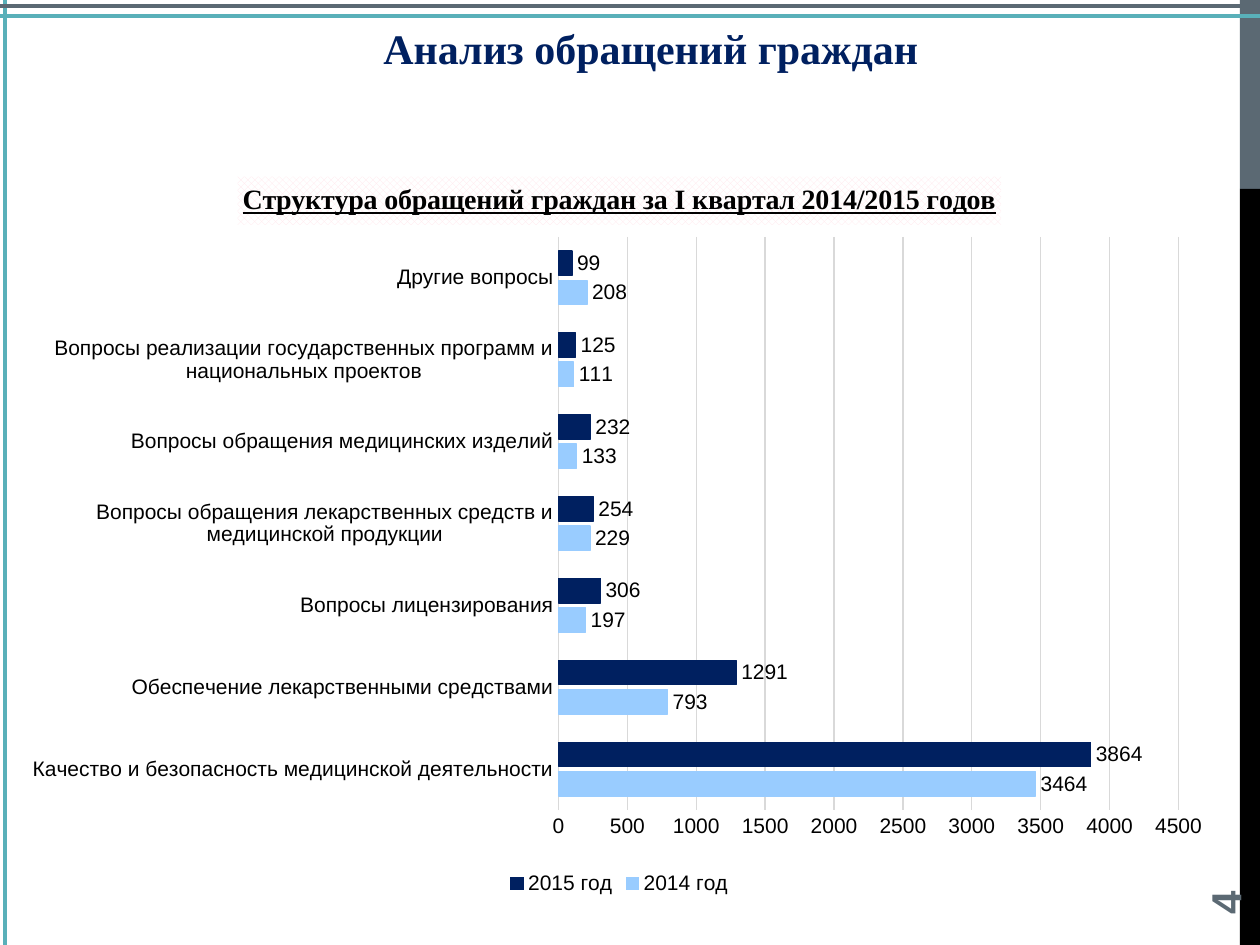
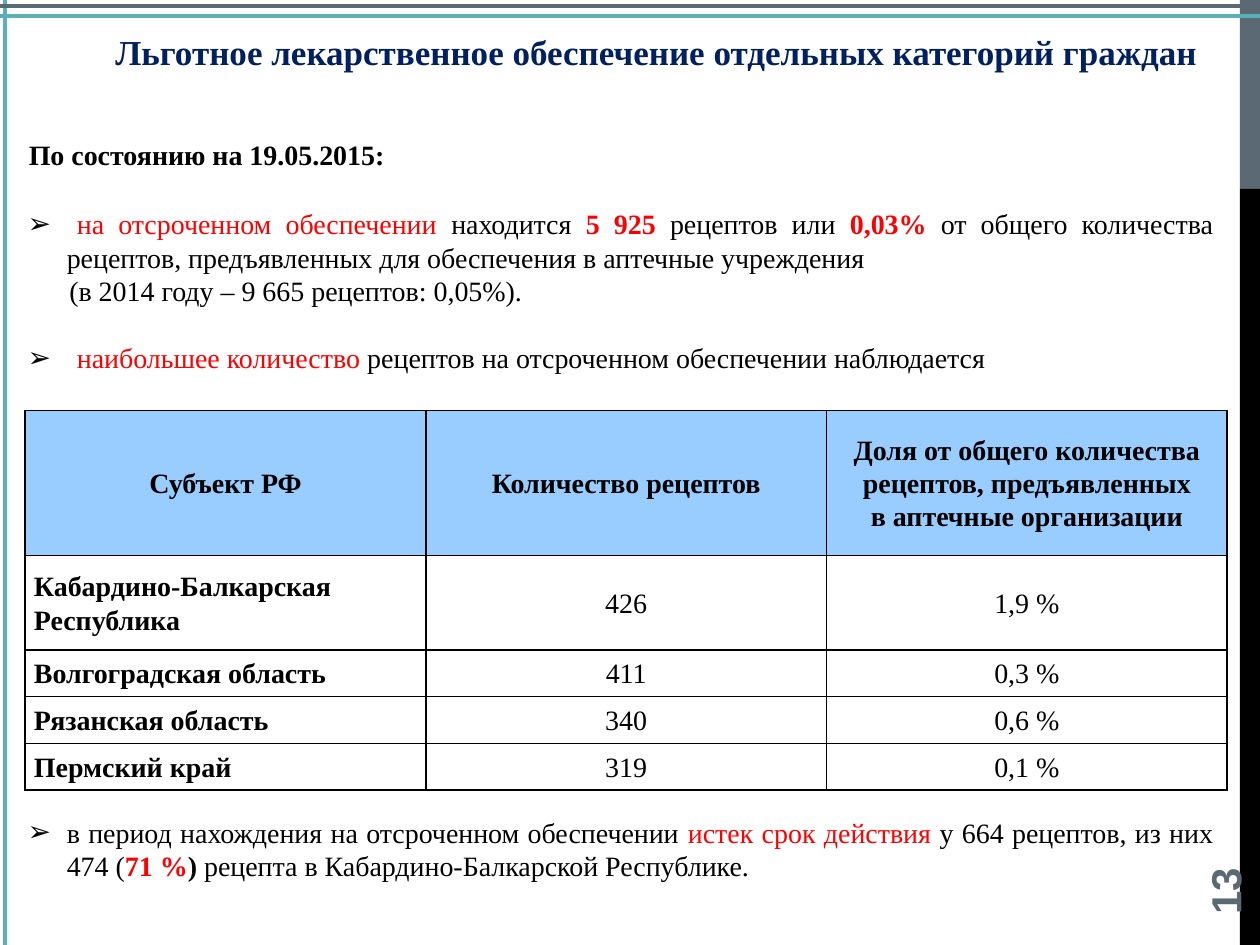
"""Build two slides on citizens' appeals and subsidised medicine supply."""
from lxml import etree
from pptx import Presentation
from pptx.chart.data import CategoryChartData
from pptx.dml.color import RGBColor
from pptx.enum.chart import XL_CHART_TYPE, XL_LABEL_POSITION, XL_LEGEND_POSITION, XL_TICK_MARK
from pptx.enum.dml import MSO_PATTERN
from pptx.enum.shapes import MSO_CONNECTOR, MSO_SHAPE
from pptx.enum.text import MSO_ANCHOR, MSO_AUTO_SIZE, PP_ALIGN
from pptx.oxml.ns import qn
from pptx.util import Inches, Pt

CENTER, LEFT, JUSTIFY = PP_ALIGN.CENTER, PP_ALIGN.LEFT, PP_ALIGN.JUSTIFY
TOP, MIDDLE = MSO_ANCHOR.TOP, MSO_ANCHOR.MIDDLE
NO_AUTOFIT = MSO_AUTO_SIZE.NONE
NO_TICKS = XL_TICK_MARK.NONE
CLUSTERED_BARS = XL_CHART_TYPE.BAR_CLUSTERED
LABELS_OUTSIDE = XL_LABEL_POSITION.OUTSIDE_END
LEGEND_BELOW = XL_LEGEND_POSITION.BOTTOM
DIAMONDS = MSO_PATTERN.OUTLINED_DIAMOND
RECTANGLE, STRAIGHT = MSO_SHAPE.RECTANGLE, MSO_CONNECTOR.STRAIGHT
NAVY = RGBColor(0x00, 0x20, 0x60)
SKY = RGBColor(0x99, 0xCC, 0xFF)
TEAL = RGBColor(0x59, 0xB0, 0xB9)
SLATE = RGBColor(0x5B, 0x69, 0x73)
GRID = RGBColor(0xD9, 0xD9, 0xD9)
PINK = RGBColor(0xFF, 0xE6, 0xEC)
RED = RGBColor(0xFF, 0x00, 0x00)
BLACK = RGBColor(0x00, 0x00, 0x00)
WHITE = RGBColor(0xFF, 0xFF, 0xFF)
SERIF, SANS = "Times New Roman", "Arial"


def style(font, size, color=BLACK, **values):
    """Format a font from its size, colour and further attributes."""
    for attribute, value in {"size": Pt(size), "name": SERIF, **values}.items():
        setattr(font, attribute, value)
    font.color.rgb = color


def place(box, left, top, width, height, **frame_values):
    """Position a text shape and set up its text frame."""
    for side, value in zip(("left", "top", "width", "height"), (left, top, width, height)):
        setattr(box, side, Inches(value))
    frame = box.text_frame
    frame_format = {"auto_size": NO_AUTOFIT, "word_wrap": True, "vertical_anchor": TOP}
    for attribute, value in {**frame_format, **frame_values}.items():
        setattr(frame, attribute, value)
    return frame


prs = Presentation()
prs.slide_width, prs.slide_height = Inches(10), Inches(7.5)
appeals = prs.slides.add_slide(prs.slide_layouts[5])
supply = prs.slides.add_slide(prs.slide_layouts[3])

frame_parts = []
for top, height, color in ((0, 1.5, SLATE), (1.5, 6, BLACK)):
    band = appeals.shapes.add_shape(
        RECTANGLE, Inches(9.84), Inches(top), Inches(0.16), Inches(height))
    band.shadow.inherit = False
    band.fill.solid()
    band.fill.fore_color.rgb = color
    band.line.fill.background()
    frame_parts.append(band)
for x1, y1, x2, y2, color in (
        (10, 0.13, 0, 0.13, TEAL), (0.04, 0, 0.04, 7.5, TEAL), (0, 0.05, 10, 0.05, SLATE)):
    rule = appeals.shapes.add_connector(
        STRAIGHT, Inches(x1), Inches(y1), Inches(x2), Inches(y2))
    rule.line.color.rgb = color
    rule.line.width = Pt(2.25)
    etree.SubElement(rule.element.spPr, qn("a:effectLst"))
    frame_parts.append(rule)
for part_id, part in enumerate(frame_parts, 101):
    part.element.xpath(".//p:cNvPr")[0].set("id", str(part_id))
    prs.slide_master.shapes.element.append(part.element)

for slide, heading, size, area, wrap, number in (
        (appeals, "Анализ обращений граждан", 24, (0.6, 0.13, 9.13, 0.5), True, "4"),
        (supply, "Льготное лекарственное обеспечение отдельных категорий граждан", 20,
         (0.78, 0.19, 8.86, 0.44), False, "13")):
    title = place(slide.shapes.title, *area, word_wrap=wrap)
    title.text = heading
    title.paragraphs[0].alignment = CENTER
    style(title.paragraphs[0].runs[0].font, size, NAVY, bold=True)
    page_box = slide.shapes.add_textbox(0, 0, 0, 0)
    page_box.rotation = 270
    page = place(page_box, 9, 6.44, 1.44, 0.4, vertical_anchor=MIDDLE)
    page.text = number
    style(page.paragraphs[0].runs[0].font, 24, SLATE, bold=True, name=SANS)

appeal_data = CategoryChartData()
appeal_data.categories = [
    "Качество и безопасность медицинской деятельности",
    "Обеспечение лекарственными средствами",
    "Вопросы лицензирования",
    "Вопросы обращения лекарственных средств и медицинской продукции",
    "Вопросы обращения медицинских изделий",
    "Вопросы реализации государственных программ и национальных проектов",
    "Другие вопросы",
]
appeal_data.add_series("2014 год", (3464, 793, 197, 229, 133, 111, 208))
appeal_data.add_series("2015 год", (3864, 1291, 306, 254, 232, 125, 99))
chart = appeals.shapes.add_chart(
    CLUSTERED_BARS, Inches(0.09), Inches(1.23), Inches(9.65), Inches(5.91), appeal_data).chart
style(chart.font, 12, name=SANS)

chart.has_title = True
chart_heading = chart.chart_title.text_frame
chart_heading.text = "Структура обращений граждан за I квартал 2014/2015 годов"
style(chart_heading.paragraphs[0].runs[0].font, 16, bold=True, underline=True)
heading_fill = chart.chart_title.format.fill
heading_fill.patterned()
heading_fill.pattern = DIAMONDS
heading_fill.fore_color.rgb = PINK
heading_fill.back_color.rgb = WHITE

chart.has_legend = True
chart.legend.position = LEGEND_BELOW
chart.legend.include_in_layout = False
style(chart.legend.font, 12, name=SANS)

for axis in (chart.category_axis, chart.value_axis):
    axis.major_tick_mark = axis.minor_tick_mark = NO_TICKS
    style(axis.tick_labels.font, 12, name=SANS)
chart.category_axis.format.line.color.rgb = GRID
chart.category_axis.format.line.width = Pt(1)
for attribute, value in {"minimum_scale": 0, "maximum_scale": 4500, "major_unit": 500}.items():
    setattr(chart.value_axis, attribute, value)
chart.value_axis.format.line.fill.background()
gridlines = chart.value_axis.major_gridlines.format.line
gridlines.color.rgb = GRID
gridlines.width = Pt(0.75)

bars = chart.plots[0]
for attribute, value in {"gap_width": 115, "overlap": -20, "vary_by_categories": False}.items():
    setattr(bars, attribute, value)
for year, color in zip(bars.series, (SKY, NAVY)):
    year.format.fill.solid()
    year.format.fill.fore_color.rgb = color
    year.format.line.color.rgb = color
    year.format.line.width = Pt(0.75)
    year.data_labels.show_value = True
    year.data_labels.position = LABELS_OUTSIDE
    style(year.data_labels.font, 12, name=SANS)

plot_layout = etree.Element(qn("c:layout"))
manual_layout = etree.SubElement(plot_layout, qn("c:manualLayout"))
for tag, value in (
        ("layoutTarget", "inner"), ("xMode", "edge"), ("yMode", "edge"),
        ("x", "0.45"), ("y", "0.11"), ("w", "0.51"), ("h", "0.77")):
    etree.SubElement(manual_layout, qn(f"c:{tag}"), val=value)
chart.element.xpath(".//c:plotArea")[0].insert(0, plot_layout)

status_date = place(supply.shapes.add_textbox(0, 0, 0, 0), 0.13, 1.04, 3.12, 0.37, word_wrap=False)
status_date.text = "По состоянию на 19.05.2015:"
style(status_date.paragraphs[0].runs[0].font, 16, bold=True)

deferred_points = [
    (True, 0, [
        ("\t", BLACK, False),
        ("на отсроченном обеспечении ", RED, False),
        ("находится ", BLACK, False),
        ("5 925 ", RED, True),
        ("рецептов или ", BLACK, False),
        ("0,03% ", RED, True),
        ("от общего количества рецептов, предъявленных для обеспечения в аптечные учреждения",
         BLACK, False)]),
    (False, 0, [("(в 2014 году – 9 665 рецептов: 0,05%).", BLACK, False)]),
    (True, 19.2, [
        ("\t", BLACK, False),
        ("наибольшее количество", RED, False),
        (" рецептов на отсроченном обеспечении наблюдается", BLACK, False)]),
]
expired_points = [
    (True, 0, [
        ("в период нахождения на отсроченном обеспечении ", BLACK, False),
        ("истек срок действия ", RED, False),
        ("у 664 рецептов, из них 474 (", BLACK, False),
        ("71 %", RED, True),
        (") ", BLACK, True),
        ("рецепта в Кабардино-Балкарской Республике.", BLACK, False)]),
]
for placeholder_id, top, height, points in (
        (1, 1.59, 1.68, deferred_points), (2, 6.42, 0.64, expired_points)):
    body = place(supply.placeholders[placeholder_id], 0.12, top, 9.61, height)
    for index, (bulleted, gap, runs) in enumerate(points):
        paragraph = body.add_paragraph() if index else body.paragraphs[0]
        properties = paragraph._p.get_or_add_pPr()
        properties.set("marL", str(Inches(0.31 if bulleted else 0.33)))
        properties.set("indent", str(Inches(-0.31 if bulleted else 0)))
        if bulleted:
            etree.SubElement(properties, qn("a:buFont"), typeface=SANS)
            etree.SubElement(properties, qn("a:buChar"), char="➢")
        else:
            etree.SubElement(properties, qn("a:buNone"))
        tabs = etree.SubElement(properties, qn("a:tabLst"))
        etree.SubElement(tabs, qn("a:tab"), pos=str(Inches(0.39)), algn="l")
        for attribute, value in {"alignment": JUSTIFY, "line_spacing": Pt(19.2),
                                 "space_before": Pt(gap)}.items():
            setattr(paragraph, attribute, value)
        for text, color, bold in runs:
            run = paragraph.add_run()
            run.text = text
            style(run.font, 16, color, bold=bold)

region_rows = [
    ("Субъект РФ", "Количество рецептов",
     "Доля от общего количества\nрецептов, предъявленных\nв аптечные организации"),
    ("Кабардино-Балкарская Республика", "426", "1,9 %"),
    ("Волгоградская область", "411", "0,3 %"),
    ("Рязанская область", "340", "0,6 %"),
    ("Пермский край", "319", "0,1 %"),
]
regions = supply.shapes.add_table(
    5, 3, Inches(0.2), Inches(3.26), Inches(9.54), Inches(3.01)).table
regions.first_row = regions.horz_banding = False
for column in regions.columns:
    column.width = Inches(3.18)
for row, height in zip(regions.rows, (1.15, 0.75, 0.37, 0.37, 0.37)):
    row.height = Inches(height)
cell_format = {"margin_left": Inches(0.07), "margin_right": Inches(0.07),
               "margin_top": 0, "margin_bottom": 0, "vertical_anchor": MIDDLE}
for row_index, texts in enumerate(region_rows):
    for column_index, text in enumerate(texts):
        cell = regions.cell(row_index, column_index)
        cell.text = text
        for attribute, value in cell_format.items():
            setattr(cell, attribute, value)
        is_header, is_region = row_index == 0, column_index == 0
        for paragraph in cell.text_frame.paragraphs:
            paragraph.alignment = LEFT if is_region and not is_header else CENTER
            paragraph.line_spacing = 1.07
            style(paragraph.runs[0].font, 16, bold=is_header or is_region)
        cell_properties = cell._tc.get_or_add_tcPr()
        for side in ("lnL", "lnR", "lnT", "lnB"):
            border = etree.SubElement(cell_properties, qn(f"a:{side}"), w=str(Pt(1)))
            border_fill = etree.SubElement(border, qn("a:solidFill"))
            etree.SubElement(border_fill, qn("a:srgbClr"), val=str(BLACK))
        if is_header:
            cell.fill.solid()
            cell.fill.fore_color.rgb = SKY
        else:
            cell.fill.background()

prs.save("out.pptx")
